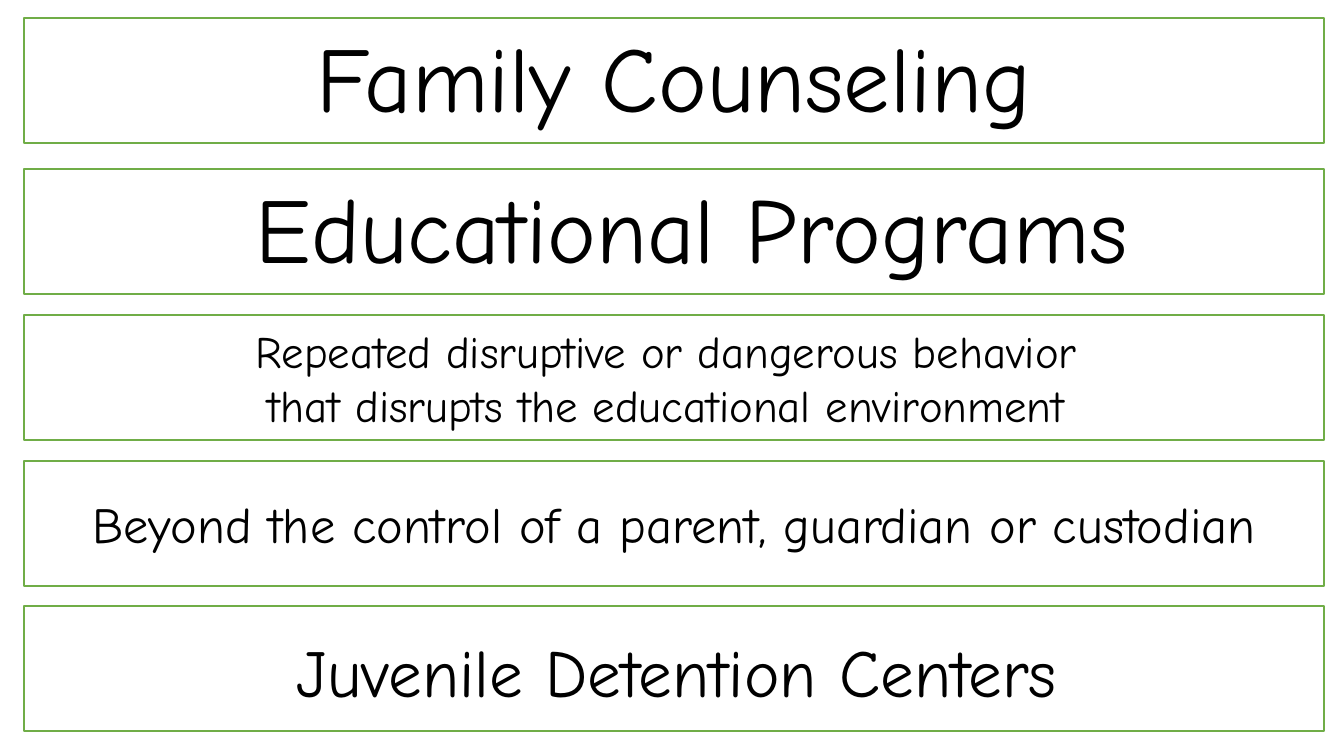
import pptx
import pptx.dml.color
import pptx.enum.shapes
import pptx.enum.text
import pptx.util

EMU_PER_PX = 914400 / 100.8
COLORS = {"panel": "FFFFFF", "border": "70AD47", "text": "000000"}
FONT = "Comic Neue"


def px(length):
    return pptx.util.Emu(round(length * EMU_PER_PX))


def color(name):
    return pptx.dml.color.RGBColor.from_string(COLORS[name])


def write_text(shape, text, size, anchor):
    frame = shape.text_frame
    frame.word_wrap = True
    frame.vertical_anchor = anchor
    for index, line in enumerate(text.split("\n")):
        paragraph = frame.paragraphs[0] if index == 0 else frame.add_paragraph()
        paragraph.alignment = pptx.enum.text.PP_ALIGN.CENTER
        run = paragraph.add_run()
        run.text = line
        run.font.name = FONT
        run.font.size = pptx.util.Pt(size)
        run.font.color.rgb = color("text")


def add_panel(slide, left, top, width, height):
    panel = slide.shapes.add_shape(
        pptx.enum.shapes.MSO_SHAPE.RECTANGLE, px(left), px(top), px(width), px(height))
    panel.shadow.inherit = False
    panel.fill.solid()
    panel.fill.fore_color.rgb = color("panel")
    panel.line.color.rgb = color("border")
    panel.line.width = pptx.util.Pt(1)
    return panel


def add_statement(slide, box, text, size):
    write_text(add_panel(slide, *box), text, size, pptx.enum.text.MSO_ANCHOR.MIDDLE)


def add_heading(slide, box, text, size, shift_x=0, shift_y=-3):
    left, top, width, height = box
    add_panel(slide, *box)
    label = slide.shapes.add_textbox(
        px(left + shift_x), px(top + shift_y), px(width), px(height - 3 - max(shift_y, 0)))
    write_text(label, text, size, pptx.enum.text.MSO_ANCHOR.TOP)


def main():
    presentation = pptx.Presentation()
    presentation.slide_width = px(1344)
    presentation.slide_height = px(756)
    slide = presentation.slides.add_slide(presentation.slide_layouts[6])

    family, education, behavior, control, detention = [
        (24, top, 1300, 125) for top in (18, 169, 315, 461, 606)]
    add_heading(slide, family, "Family Counseling", size=66)
    add_heading(slide, education, "Educational Programs", size=66, shift_x=18)
    add_statement(slide, behavior, "Repeated disruptive or dangerous behavior \n"
                  "that disrupts the educational environment ", size=32)
    add_statement(slide, control,
                  "Beyond the control of a parent, guardian or custodian", size=36)
    add_heading(slide, detention, "Juvenile Detention Centers", size=48,
                shift_x=3, shift_y=19)

    presentation.save("out.pptx")


if __name__ == "__main__":
    main()
